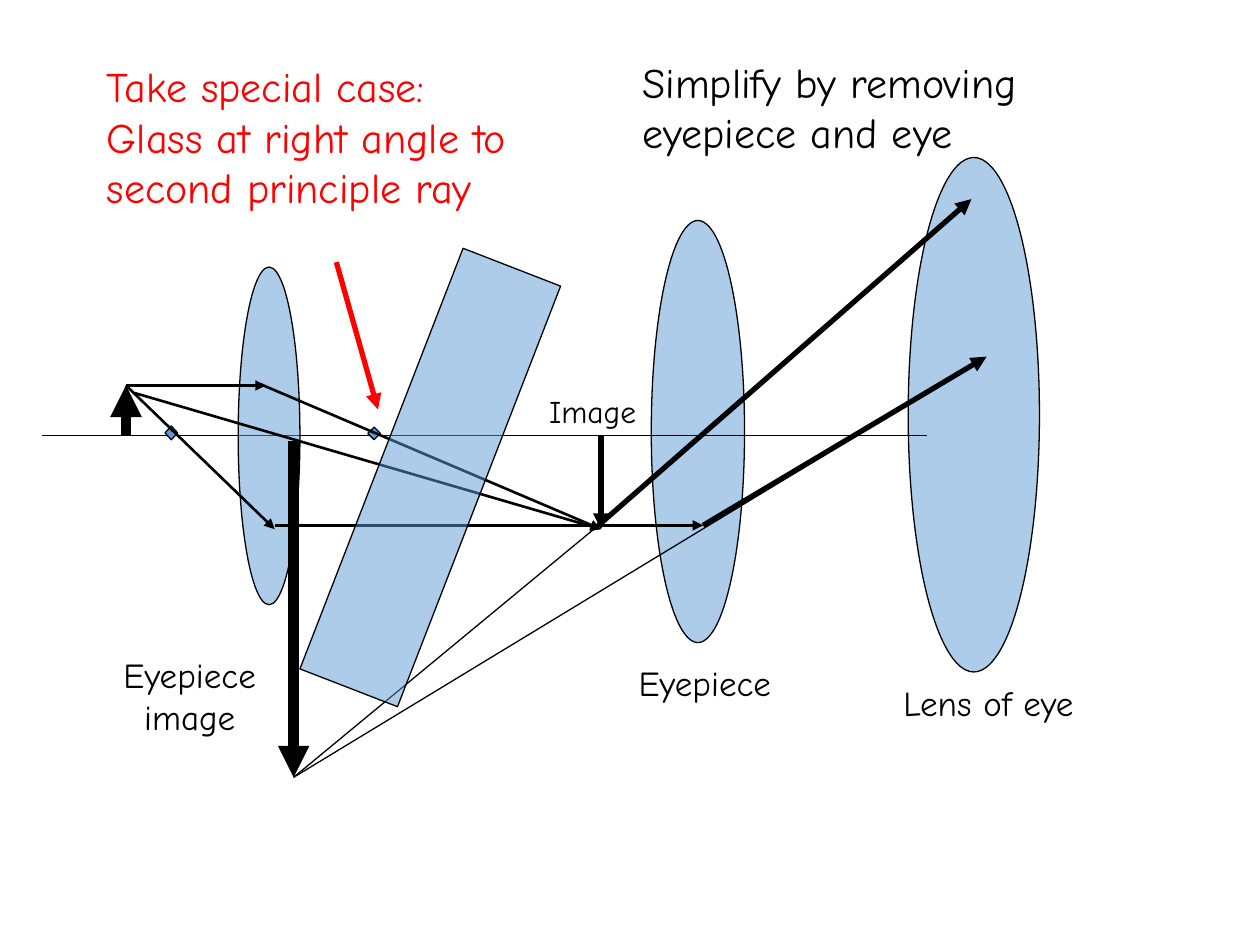
from dataclasses import dataclass
from lxml import etree
from pptx import Presentation
from pptx.dml.color import RGBColor as RGB
from pptx.enum.shapes import MSO_CONNECTOR as CONN, MSO_SHAPE as SHAPE
from pptx.enum.text import MSO_ANCHOR as ANCHOR, MSO_AUTO_SIZE as FIT, PP_ALIGN as ALIGN
from pptx.oxml.ns import qn
from pptx.util import Pt


@dataclass(frozen=True)
class Theme:
    font: str = "Comic Neue"
    ink: RGB = RGB(0, 0, 0)
    accent: RGB = RGB(255, 0, 0)
    glass: RGB = RGB(0x5B, 0x9B, 0xD5)
    note: int = 24
    label: int = 20
    small: int = 18
    hair: float = 0.75
    ray: float = 1.5
    bold: float = 3
    heavy: float = 6


T = Theme()


def add_text(slide, box, lines, size, color=T.ink, align=ALIGN.LEFT,
             anchor=ANCHOR.MIDDLE, wrap=False):
    tf = slide.shapes.add_textbox(*map(Pt, box)).text_frame
    frame = {"word_wrap": wrap, "auto_size": FIT.SHAPE_TO_FIT_TEXT, "vertical_anchor": anchor}
    for name, value in frame.items():
        setattr(tf, name, value)
    for i, line in enumerate(lines):
        p = tf.paragraphs[0] if i == 0 else tf.add_paragraph()
        p.alignment = align
        r = p.add_run()
        r.text = line
        for name, value in {"name": T.font, "size": Pt(size)}.items():
            setattr(r.font, name, value)
        r.font.color.rgb = color


def add_part(slide, origin, kind, box, alpha=None, rotation=0):
    x, y, w, h = box
    sp = slide.shapes.add_shape(kind, Pt(origin[0] + x), Pt(origin[1] + y), Pt(w), Pt(h))
    sp.shadow.inherit = False
    sp.rotation = rotation
    sp.fill.solid()
    sp.fill.fore_color.rgb = T.glass
    sp.line.color.rgb = T.ink
    sp.line.width = Pt(T.hair)
    if alpha:
        color = sp.fill._xPr.find(qn("a:solidFill"))[0]
        etree.SubElement(color, qn("a:alpha"), val=str(alpha * 1000))


def add_line(slide, origin, start, end, width, color=T.ink, arrow=True):
    ends = [Pt(o + v) for point in (start, end) for o, v in zip(origin, point)]
    ln = slide.shapes.add_connector(CONN.STRAIGHT, *ends)
    ln.line.color.rgb = color
    ln.line.width = Pt(width)
    if arrow:
        etree.SubElement(ln.line._get_or_add_ln(), qn("a:tailEnd"), type="triangle")
    etree.SubElement(ln._element.spPr, qn("a:effectLst"))


def add_optics(slide, box):
    origin = box[:2]
    axis = 159
    object_tip = (48, 130.3)
    lens_top, lens_low = (127.9, 130.3), (133, 212.4)
    image_tip, crossing = (319.4, 212.4), (318, 210.2)
    eyepiece_hit = (377.8, 210.2)
    virtual_tip = (143.8, 354.2)

    add_part(slide, origin, SHAPE.OVAL, (495, 0, 75, 294), 50)
    add_part(slide, origin, SHAPE.OVAL, (348.2, 36, 53.3, 241.2), 50)
    add_line(slide, origin, (0, axis), (506, axis), T.hair, arrow=False)
    add_part(slide, origin, SHAPE.OVAL, (112.1, 62.6, 35.3, 193), 50)
    for focus in ((186.2, 154.1, 7.2, 7.2), (70.3, 153.4, 7.2, 7.9)):
        add_part(slide, origin, SHAPE.DIAMOND, focus)

    arrows = [
        ((53, 134.6), image_tip, T.ray),
        ((48, axis), object_tip, T.heavy),
        (object_tip, lens_top, T.ray),
        (object_tip, lens_low, T.ray),
        ((133, 210.2), eyepiece_hit, T.ray),
        ((319.4, axis), image_tip, T.bold),
        ((125, 129.6), image_tip, T.ray),
        ((143.8, 162), virtual_tip, T.heavy),
        (crossing, (531.1, 23.8), T.bold),
        (eyepiece_hit, (539.8, 113.8), T.bold),
    ]
    for start, end, width in arrows:
        add_line(slide, origin, start, end, width)
    for start in (crossing, (510.2, 131.8)):
        add_line(slide, origin, start, virtual_tip, T.hair, arrow=False)

    add_part(slide, origin, SHAPE.RECTANGLE, (192, 54, 59.8, 257.8), 50, 21.2)
    add_line(slide, origin, (168.2, 59.8), (192, 144), T.bold, T.accent)


def add_labels(slide, box):
    left, top = box[:2]
    add_text(slide, (left + 282.7, top + 130.3, 67, 32.4), ["Image"], T.small, anchor=ANCHOR.TOP)
    labels = [
        ((35.8, 275.8, 97.2, 63.4), ["Eyepiece", "image"]),
        ((330.2, 282.2, 97.2, 35.3), ["Eyepiece"]),
        ((480, 293.8, 121.7, 35.3), ["Lens of eye"]),
    ]
    for (x, y, w, h), lines in labels:
        add_text(slide, (left + x, top + y, w, h), lines, T.label, align=ALIGN.CENTER)


def add_notes_row(slide, box):
    left, top = box[:2]
    add_text(slide, (left, top, 270, 108),
             ["Take special case:", "Glass at right angle to second principle ray"],
             T.note, T.accent, wrap=True)
    add_text(slide, (left + 306, top, 264, 74),
             ["Simplify by removing eyepiece and eye"], T.note, wrap=True)


def main():
    prs = Presentation()
    prs.slide_width, prs.slide_height = Pt(720), Pt(540)
    slide = prs.slides.add_slide(prs.slide_layouts[6])
    diagram = (24, 90, 602, 355)
    add_optics(slide, diagram)
    add_labels(slide, diagram)
    add_notes_row(slide, (54, 24, 570, 108))
    prs.save("out.pptx")


if __name__ == "__main__":
    main()
